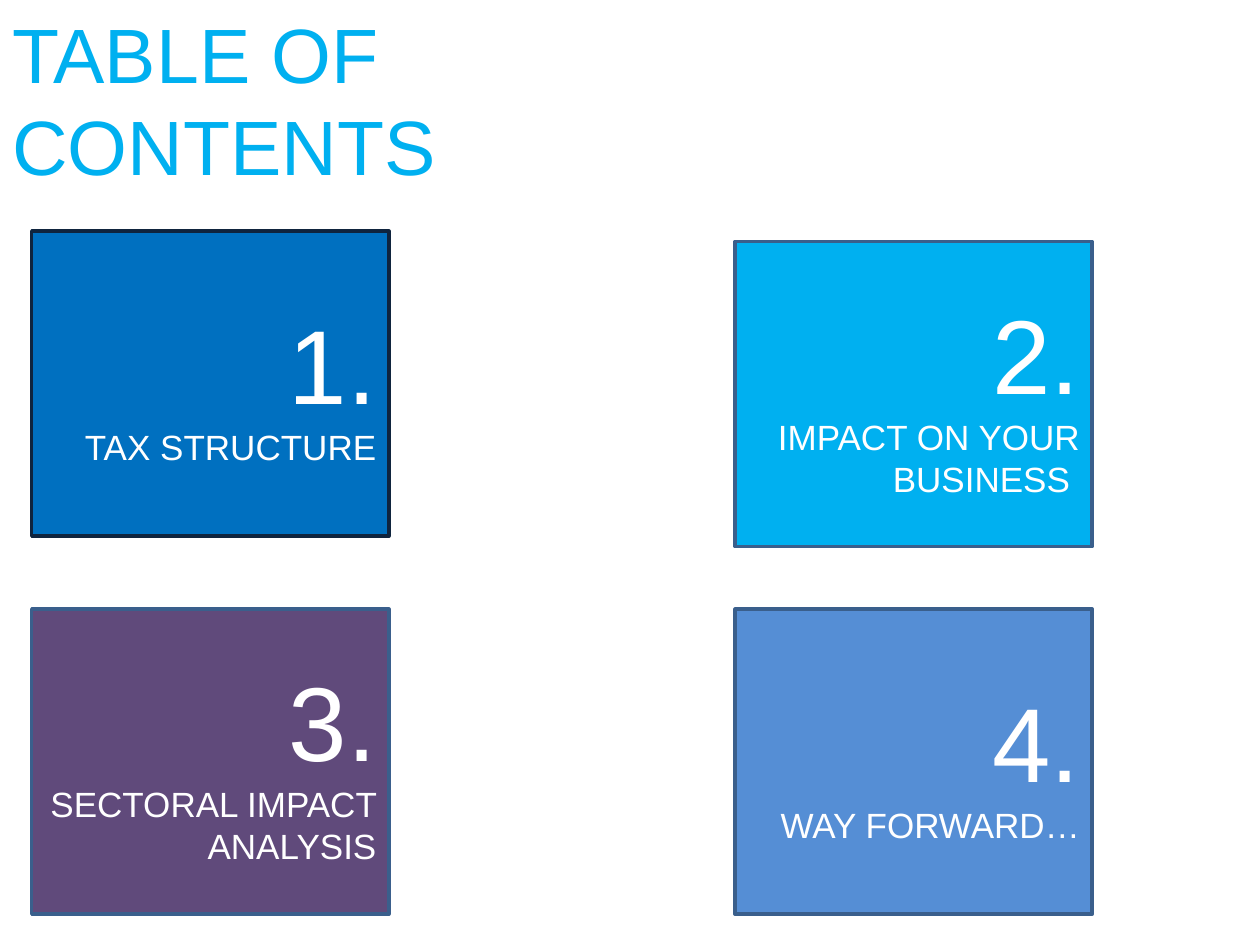
from pptx import Presentation
from pptx.dml.color import RGBColor
from pptx.enum import shapes, text
from pptx.util import Cm, Pt

FONT = "Arial"
WHITE = RGBColor(0xFF, 0xFF, 0xFF)
SKY = RGBColor(0x00, 0xB0, 0xF0)
BLUE = RGBColor(0x00, 0x70, 0xC0)
PURPLE = RGBColor(0x60, 0x4A, 0x7B)
PERIWINKLE = RGBColor(0x55, 0x8E, 0xD5)
STEEL = RGBColor(0x3A, 0x5F, 0x8C)
NAVY = RGBColor(0x0F, 0x24, 0x3E)

LEFT_COLUMN, RIGHT_COLUMN = Cm(0.64), Cm(14.82)
LOWER_ROW = Cm(12.28)
TILE_WIDTH, TILE_HEIGHT = Cm(7.2), Cm(6.15)

# Label, left, top, fill, border
TILES = [
    ("TAX STRUCTURE", LEFT_COLUMN, Cm(4.66), BLUE, NAVY),
    ("IMPACT ON YOUR BUSINESS ", RIGHT_COLUMN, Cm(4.87), SKY, STEEL),
    ("SECTORAL IMPACT ANALYSIS", LEFT_COLUMN, LOWER_ROW, PURPLE, STEEL),
    ("WAY FORWARD…", RIGHT_COLUMN, LOWER_ROW, PERIWINKLE, STEEL),
]


def write(para, wording, *, size, color, align=text.PP_ALIGN.LEFT):
    para.alignment = align
    span = para.add_run()
    span.text = wording
    span.font.name = FONT
    span.font.size = Pt(size)
    span.font.color.rgb = color


def add_title(page, wording):
    box = page.shapes.add_textbox(0, 0, Cm(16.08), Cm(2.13))
    frame = box.text_frame
    frame.word_wrap = True
    frame.auto_size = text.MSO_AUTO_SIZE.SHAPE_TO_FIT_TEXT
    write(frame.paragraphs[0], wording, size=44, color=SKY)


def add_tile(page, number, label, left, top, fill, border):
    tile = page.shapes.add_shape(
        shapes.MSO_SHAPE.RECTANGLE, left, top, TILE_WIDTH, TILE_HEIGHT)
    tile.shadow.inherit = False
    tile.fill.solid()
    tile.fill.fore_color.rgb = fill
    tile.line.color.rgb = border
    tile.line.width = Pt(2)
    frame = tile.text_frame
    frame.word_wrap = True
    frame.vertical_anchor = text.MSO_ANCHOR.MIDDLE
    style = {"color": WHITE, "align": text.PP_ALIGN.RIGHT}
    write(frame.paragraphs[0], f"{number}.", size=60, **style)
    write(frame.add_paragraph(), label, size=20, **style)


def main():
    deck = Presentation()
    deck.slide_width, deck.slide_height = Cm(25.4), Cm(19.05)
    page = deck.slides.add_slide(deck.slide_layouts[6])

    # Heading
    add_title(page, "TABLE OF CONTENTS")

    # Numbered chapters
    for number, tile in enumerate(TILES, start=1):
        add_tile(page, number, *tile)

    deck.save("out.pptx")


if __name__ == "__main__":
    main()
